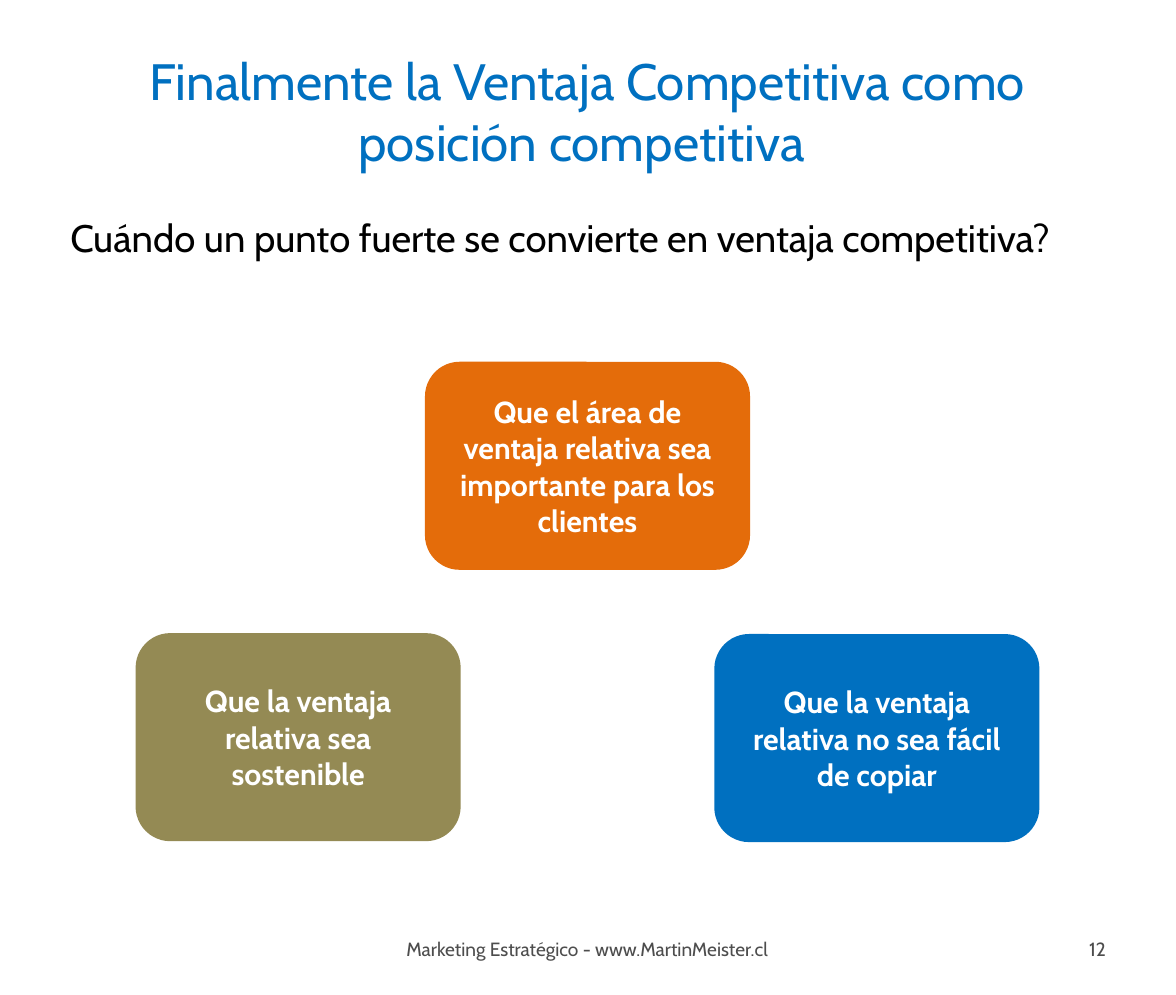
from pptx import Presentation
from pptx import util as u
from pptx.dml.color import RGBColor
from pptx.enum import shapes, text
from pptx.oxml.xmlchemy import OxmlElement

FONT = "Cabin"
LEFT, CENTER, RIGHT = text.PP_ALIGN.LEFT, text.PP_ALIGN.CENTER, text.PP_ALIGN.RIGHT
TOP, MIDDLE = text.MSO_ANCHOR.TOP, text.MSO_ANCHOR.MIDDLE
CARD_WIDTH, CARD_HEIGHT = 7.19, 4.6
CARDS = [
    ("Que el área de ventaja relativa sea importante para los clientes", 9.4, 8, "E46C0A"),
    ("Que la ventaja relativa sea sostenible", 3, 14, "948A54"),
    ("Que la ventaja relativa no sea fácil de copiar", 15.8, 14.02, "0070C0"),
]


def color(hex_value):
    """Turn a hex string into a colour."""
    return RGBColor.from_string(hex_value)


def write(holder, wording, size, hex_value, align=CENTER, anchor=MIDDLE, bold=False):
    """Fill a shape with one formatted paragraph."""
    frame = holder.text_frame
    frame.text = wording
    frame.word_wrap = True
    frame.auto_size = text.MSO_AUTO_SIZE.NONE
    frame.vertical_anchor = anchor
    paragraph = frame.paragraphs[0]
    paragraph.alignment = align
    paragraph.space_before = u.Pt(0)
    font = paragraph.runs[0].font
    font.name, font.size, font.bold = FONT, u.Pt(size), bold
    font.color.rgb = color(hex_value)


def place(holder, left, top, width, height):
    """Move and size a placeholder."""
    holder.left, holder.top = u.Cm(left), u.Cm(top)
    holder.width, holder.height = u.Cm(width), u.Cm(height)


def remove_bullet(paragraph):
    """Drop the bullet and the hanging indent of a paragraph."""
    properties = paragraph._p.get_or_add_pPr()
    properties.set("marL", "0")
    properties.set("indent", "0")
    properties.append(OxmlElement("a:buNone"))


def add_footer(slide, wording, left, width, align):
    """Add a text to the footer line."""
    footer = slide.shapes.add_textbox(u.Cm(left), u.Cm(20.4), u.Cm(width), u.Cm(1.17))
    write(footer, wording, 12, "4D4D4D", align)


def add_card(slide, condition, left, top, fill):
    """Add a rounded card that states one condition."""
    card = slide.shapes.add_shape(
        shapes.MSO_SHAPE.ROUNDED_RECTANGLE,
        u.Cm(left), u.Cm(top), u.Cm(CARD_WIDTH), u.Cm(CARD_HEIGHT))
    card.shadow.inherit = False
    card.fill.solid()
    card.fill.fore_color.rgb = color(fill)
    card.line.fill.background()
    card.text_frame.margin_left = card.text_frame.margin_right = u.Cm(0.38)
    write(card, condition, 19, "FFFFFF", bold=True)


def main():
    """Build the slide and save it."""
    deck = Presentation()
    deck.slide_width, deck.slide_height = u.Cm(26.01), u.Cm(22)
    slide = deck.slides.add_slide(deck.slide_layouts[1])

    title, question = slide.placeholders
    place(title, 1.3, 0.89, 23.39, 3.12)
    write(title, "Finalmente la Ventaja Competitiva como posición competitiva ", 32, "0070C0")
    place(question, 1.3, 4.6, 23.39, 15.06)
    write(question, "Cuándo un punto fuerte se convierte en ventaja competitiva?",
          24, "000000", LEFT, TOP)
    remove_bullet(question.text_frame.paragraphs[0])

    add_footer(slide, "Marketing Estratégico - www.MartinMeister.cl", 7.39, 11.2, CENTER)
    add_footer(slide, "12", 18.64, 6.07, RIGHT)
    for card in CARDS:
        add_card(slide, *card)

    deck.save("out.pptx")


if __name__ == "__main__":
    main()
